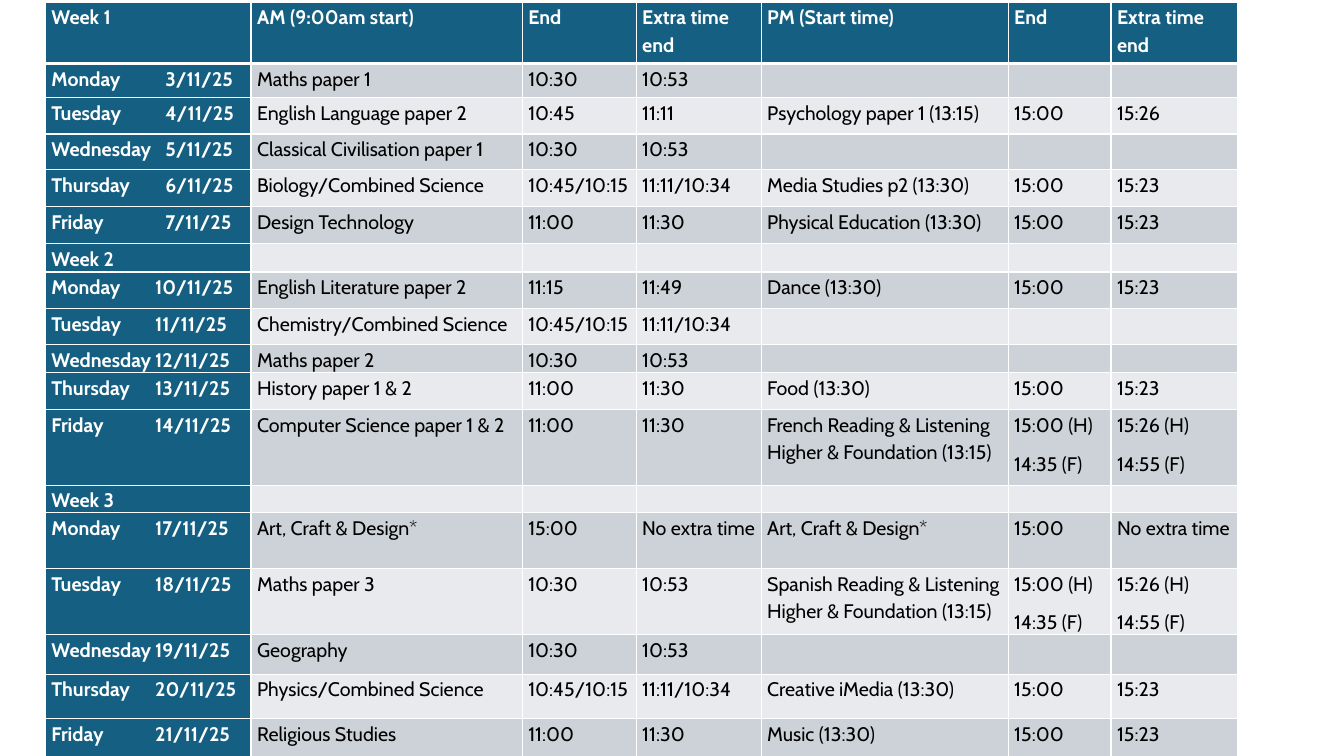
from lxml.etree import SubElement
from pptx import Presentation
from pptx.dml.color import RGBColor as Color
from pptx.oxml.ns import qn
from pptx.util import Inches, Pt

TEAL, WHITE, BLACK = "156082", "FFFFFF", "000000"
BANDS = ["E8EAED", "CCD2D8"]
COLUMN_WIDTHS = [2.04, 2.69, 1.13, 1.24, 2.45, 1.02, 1.26]
ROW_HEIGHTS = [0.61, 0.34, 0.36, 0.35, 0.37, 0.37, 0.28, 0.36, 0.36, 0.27,
               0.37, 0.75, 0.27, 0.55, 0.66, 0.39, 0.44, 0.4]

# Exam timetable: day and date, morning exam, ends, afternoon exam, ends
TIMETABLE = [
    ["Week 1", "AM (9:00am start)", "End", "Extra time end",
     "PM (Start time)", "End", "Extra time end"],
    ["Monday\t3/11/25", "Maths paper 1", "10:30", "10:53"],
    ["Tuesday\t4/11/25", "English Language paper 2", "10:45", "11:11",
     "Psychology paper 1 (13:15)", "15:00", "15:26"],
    ["Wednesday\t5/11/25", "Classical Civilisation paper 1", "10:30", "10:53"],
    ["Thursday\t6/11/25", "Biology/Combined Science", "10:45/10:15", "11:11/10:34",
     "Media Studies p2 (13:30)", "15:00", "15:23"],
    ["Friday\t7/11/25", "Design Technology", "11:00", "11:30",
     "Physical Education (13:30)", "15:00", "15:23"],
    ["Week 2"],
    ["Monday\t10/11/25", "English Literature paper 2", "11:15", "11:49",
     "Dance (13:30)", "15:00", "15:23"],
    ["Tuesday\t11/11/25", "Chemistry/Combined Science", "10:45/10:15", "11:11/10:34"],
    ["Wednesday\t12/11/25", "Maths paper 2", "10:30", "10:53"],
    ["Thursday\t13/11/25", "History paper 1 & 2", "11:00", "11:30",
     "Food (13:30)", "15:00", "15:23"],
    ["Friday\t14/11/25", "Computer Science paper 1 & 2", "11:00", "11:30",
     "French Reading & Listening Higher & Foundation (13:15)",
     "15:00 (H)\n14:35 (F)", "15:26 (H)\n14:55 (F)"],
    ["Week 3"],
    ["Monday\t17/11/25", "Art, Craft & Design*", "15:00", "No extra time",
     "Art, Craft & Design*", "15:00", "No extra time"],
    ["Tuesday\t18/11/25", "Maths paper 3", "10:30", "10:53",
     "Spanish Reading & Listening Higher & Foundation (13:15)",
     "15:00 (H)\n14:35 (F)", "15:26 (H)\n14:55 (F)"],
    ["Wednesday\t19/11/25", "Geography", "10:30", "10:53"],
    ["Thursday\t20/11/25", "Physics/Combined Science", "10:45/10:15", "11:11/10:34",
     "Creative iMedia (13:30)", "15:00", "15:23"],
    ["Friday\t21/11/25", "Religious Studies", "11:00", "11:30",
     "Music (13:30)", "15:00", "15:23"],
]


def write(cell, text, color=BLACK, bold=False, size=14, font="Cabin"):
    frame = cell.text_frame
    for index, line in enumerate(text.split("\n")):
        paragraph = frame.add_paragraph() if index else frame.paragraphs[0]
        paragraph.line_spacing = 1.16
        paragraph.space_after = Pt(8)
        if "\t" in line:
            # One-digit dates start a little further right
            day, date = line.split("\t")
            stop = Inches(1.03 if len(date) == 8 else 1.13)
            tabs = SubElement(paragraph._p.get_or_add_pPr(), qn("a:tabLst"))
            SubElement(tabs, qn("a:tab"), pos=str(stop), algn="l")
        if line:
            run = paragraph.add_run()
            run.text = line
            run.font.name = font
            run.font.size = Pt(size)
            run.font.bold = bold
            run.font.color.rgb = Color.from_string(color)
        else:
            # Keeps empty cells from stretching short rows
            SubElement(paragraph._p, qn("a:endParaRPr"), sz=str(size * 100))


def paint(cell, color, bottom_width):
    properties = cell._tc.get_or_add_tcPr()
    for side, width in zip("LRTB", [1, 1, 1, bottom_width]):
        line = SubElement(properties, qn(f"a:ln{side}"), w=str(Pt(width)))
        solid = SubElement(line, qn("a:solidFill"))
        SubElement(solid, qn("a:srgbClr"), val=WHITE)
    cell.fill.solid()
    cell.fill.fore_color.rgb = Color.from_string(color)


presentation = Presentation()
presentation.slide_width = Inches(13.33)
presentation.slide_height = Inches(7.5)
slide = presentation.slides.add_slide(presentation.slide_layouts[6])

# Table grid
shape = slide.shapes.add_table(
    len(ROW_HEIGHTS), len(COLUMN_WIDTHS), Inches(0.45), Inches(0.02),
    Inches(sum(COLUMN_WIDTHS)), Inches(sum(ROW_HEIGHTS)))
table = shape.table
for column, width in zip(table.columns, COLUMN_WIDTHS):
    column.width = Inches(width)
for row, height in zip(table.rows, ROW_HEIGHTS):
    row.height = Inches(height)

# Cells: teal header row and day column, grey bands elsewhere
for row_index, entries in enumerate(TIMETABLE):
    for column_index in range(len(COLUMN_WIDTHS)):
        cell = table.cell(row_index, column_index)
        cell.margin_left = cell.margin_right = Inches(0.06)
        cell.margin_top = cell.margin_bottom = 0
        heading = row_index == 0 or column_index == 0
        paint(cell, TEAL if heading else BANDS[row_index % 2],
              bottom_width=1 if row_index else 3)
        text = entries[column_index] if column_index < len(entries) else ""
        write(cell, text, color=WHITE if heading else BLACK, bold=heading)

presentation.save("out.pptx")
